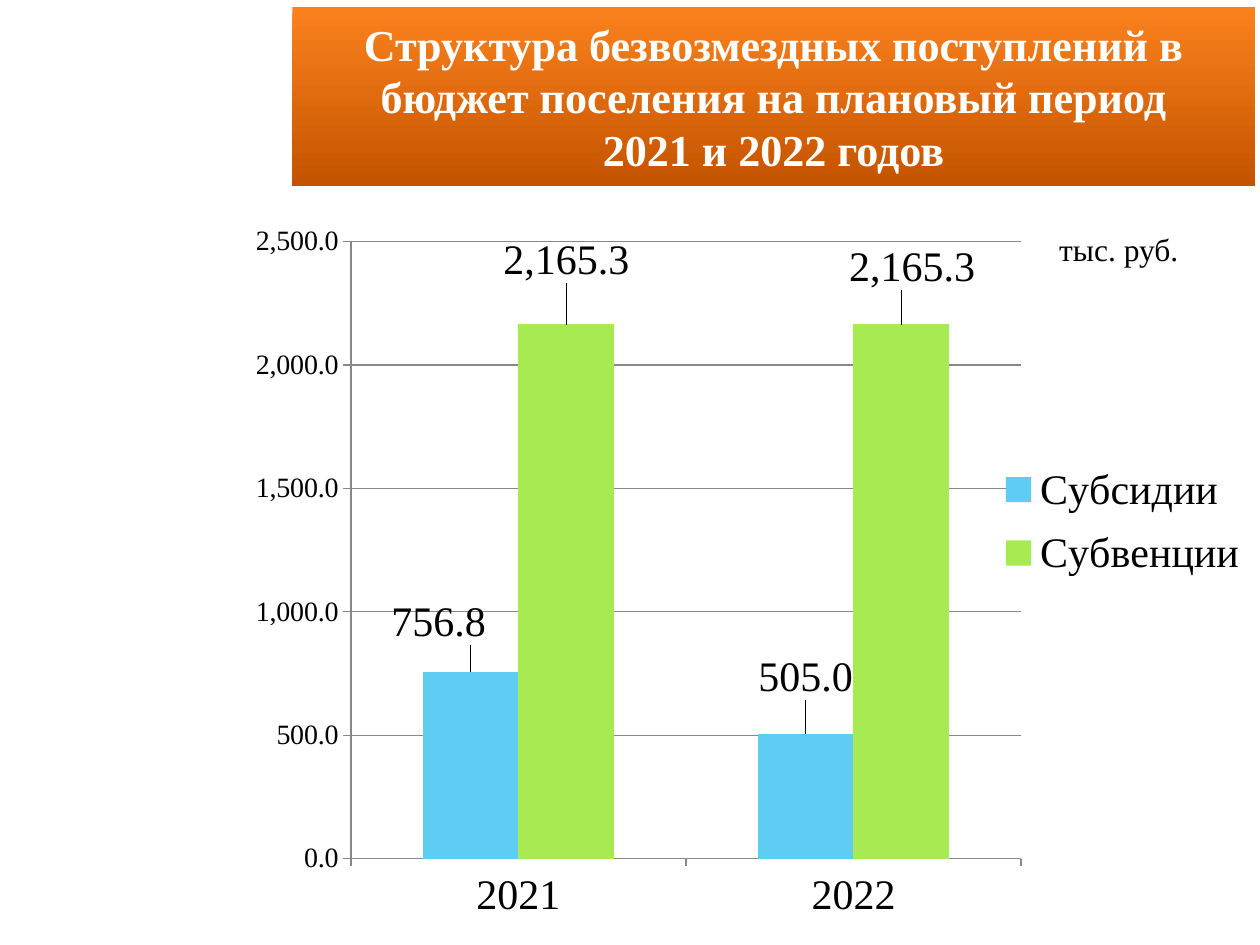
from lxml import etree
from pptx import Presentation, util as u
from pptx.chart.data import CategoryChartData
from pptx.dml.color import RGBColor
from pptx.enum import chart as ch, shapes, text
from pptx.oxml.ns import qn

W, H = u.Inches(10), u.Inches(7.5)
FONT = "Times New Roman"
FORMAT = "#,##0.0"
COLORS = {"top": "FB811D", "bottom": "C45400", "white": "FFFFFF",
          "black": "000000", "axis": "878787",
          "Субсидии": "5ECCF3", "Субвенции": "A7EA52"}
VALUES = {"Субсидии": (756.8, 505.0), "Субвенции": (2165.3, 2165.3)}
LABEL_SHIFTS = {"Субсидии": ((-0.03, -0.03), (0, -0.04)),
                "Субвенции": ((0, -0.05), (0.01, -0.04))}


def rgb(name):
    return RGBColor.from_string(COLORS[name])


def place(x, y, w, h):
    return int(W * x), int(H * y), int(W * w), int(H * h)


def style(font, size, color="black", bold=False):
    font.name, font.size, font.bold = FONT, u.Pt(size), bold
    font.color.rgb = rgb(color)


def write(sp, content, size, color="black", bold=False):
    tf = sp.text_frame
    tf.word_wrap = True
    p = tf.paragraphs[0]
    p.text = content
    p.alignment = text.PP_ALIGN.CENTER
    for r in p.runs:
        style(r.font, size, color, bold)


def set_layout(parent, index, **values):
    layout = etree.Element(qn("c:layout"))
    manual = etree.SubElement(layout, qn("c:manualLayout"))
    for tag, val in values.items():
        etree.SubElement(manual, qn(f"c:{tag}")).set("val", str(val))
    for old in parent.findall(qn("c:layout")):
        parent.remove(old)
    parent.insert(index, layout)


def add_title(s, box):
    sp = s.shapes.add_shape(shapes.MSO_SHAPE.RECTANGLE, *place(*box))
    sp.shadow.inherit = False
    sp.line.fill.background()
    sp.fill.gradient()
    sp.fill.gradient_angle = 270
    for stop, name, pos in zip(sp.fill.gradient_stops, ("top", "bottom"), (0, 1)):
        stop.color.rgb = rgb(name)
        stop.position = pos
    sp.text_frame.vertical_anchor = text.MSO_ANCHOR.MIDDLE
    write(sp, "Структура безвозмездных поступлений в бюджет поселения "
              "на плановый период\v2021 и 2022 годов", 25.2, "white", True)


def add_unit(s, box):
    write(s.shapes.add_textbox(*place(*box)), "тыс. руб.", 18)


def format_axis(axis, size):
    style(axis.tick_labels.font, size)
    axis.major_tick_mark = ch.XL_TICK_MARK.OUTSIDE
    axis.minor_tick_mark = ch.XL_TICK_MARK.NONE
    axis.format.line.color.rgb = rgb("axis")


def format_series(series):
    series.format.fill.solid()
    series.format.fill.fore_color.rgb = rgb(series.name)
    labels = series.data_labels
    labels.show_value = True
    labels.number_format, labels.number_format_is_linked = FORMAT, False
    style(labels.font, 24)
    for i, (dx, dy) in enumerate(LABEL_SHIFTS[series.name]):
        label = series.points[i].data_label
        label.position = ch.XL_LABEL_POSITION.OUTSIDE_END
        style(label.font, 24)
        set_layout(labels._element.findall(qn("c:dLbl"))[i], 1, x=dx, y=dy)


def add_chart(s, box):
    data = CategoryChartData(number_format=FORMAT)
    data.categories = ["2021", "2022"]
    for name, vals in VALUES.items():
        data.add_series(name, vals)
    chart = s.shapes.add_chart(ch.XL_CHART_TYPE.COLUMN_CLUSTERED,
                               *place(*box), data).chart
    style(chart.font, 18)
    chart.has_title = False
    format_axis(chart.category_axis, 24)
    axis = chart.value_axis
    format_axis(axis, 16)
    axis.minimum_scale, axis.maximum_scale, axis.major_unit = 0, 2500, 500
    axis.tick_labels.number_format = FORMAT
    axis.tick_labels.number_format_is_linked = False
    axis.major_gridlines.format.line.color.rgb = rgb("axis")
    plot = chart.plots[0]
    plot.gap_width, plot.overlap, plot.vary_by_categories = 150, 0, False
    for series in plot.series:
        format_series(series)
    chart.has_legend = True
    legend = chart.legend
    legend.position = ch.XL_LEGEND_POSITION.RIGHT
    legend.include_layout = False
    style(legend.font, 24)
    set_layout(legend._element, 1, xMode="edge", yMode="edge",
               x=0.75, y=0.33, w=0.24, h=0.2)
    area = chart._chartSpace.find(".//" + qn("c:plotArea"))
    set_layout(area, 0, layoutTarget="inner", xMode="edge", yMode="edge",
               x=0.147, y=0.038, w=0.628, h=0.865)


def main():
    prs = Presentation()
    prs.slide_width, prs.slide_height = W, H
    s = prs.slides.add_slide(prs.slide_layouts[6])
    add_title(s, (0.232, 0.007, 0.764, 0.19))
    add_unit(s, (0.813, 0.237, 0.15, 0.053))
    add_chart(s, (0.154, 0.227, 0.847, 0.755))
    prs.save("out.pptx")


if __name__ == "__main__":
    main()
